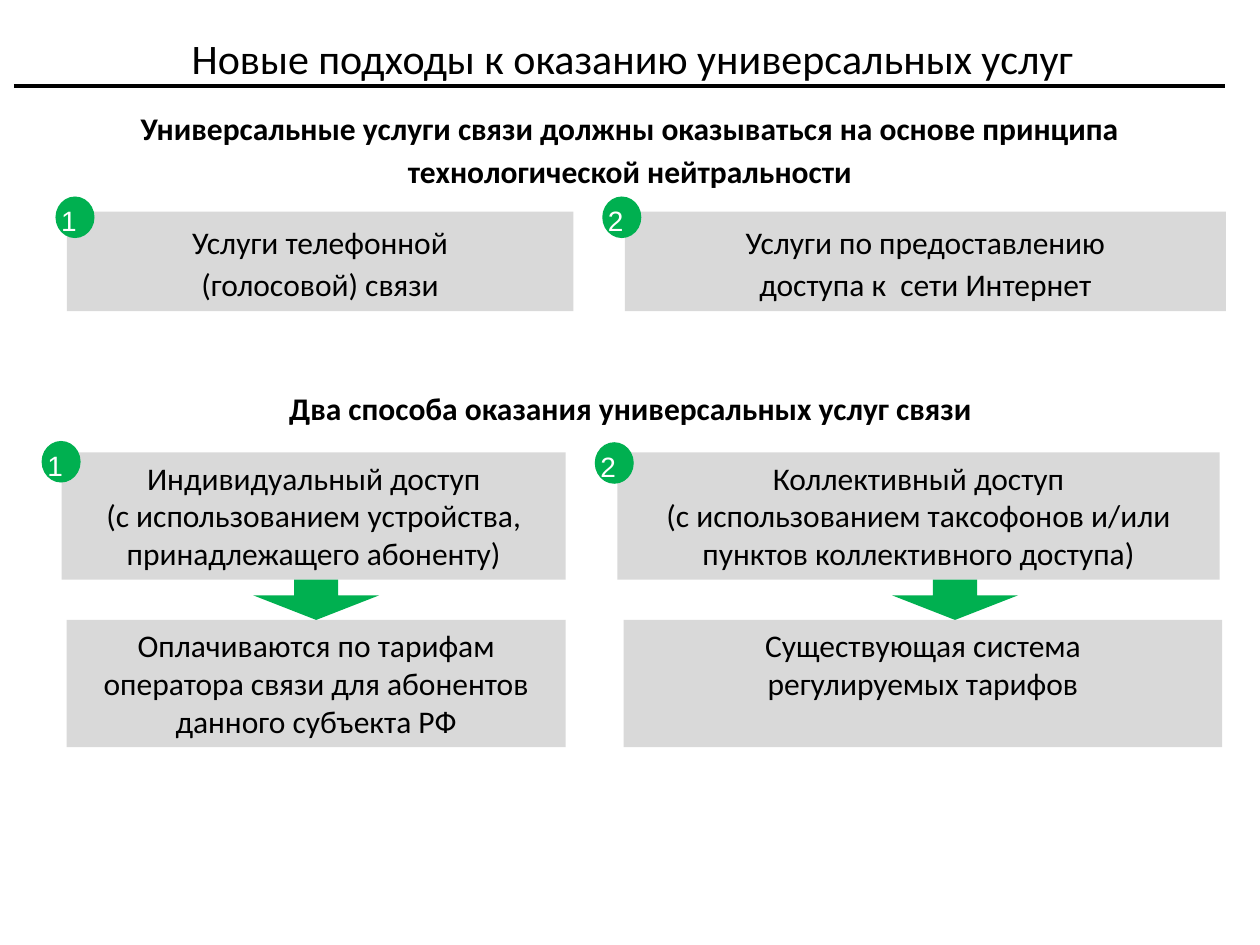
from lxml import etree
from pptx import Presentation
from pptx.dml.color import RGBColor
from pptx.enum.shapes import MSO_CONNECTOR, MSO_SHAPE
from pptx.enum.text import MSO_ANCHOR, PP_ALIGN
from pptx.oxml.ns import qn
from pptx.util import Inches, Pt

COLORS = {"text": "000000", "panel": "D9D9D9", "accent": "00B050", "badge": "FFFFFF"}

TITLE = "Новые подходы к оказанию универсальных услуг"

# text, (left, top, width, height), line spacing
HEADINGS = [
    ("Универсальные услуги связи должны оказываться на основе принципа "
     "технологической нейтральности", (0.4, 0.78, 9.2, 0.79), 1.13),
    ("Два способа оказания универсальных услуг связи", (0.44, 3.04, 9.13, 0.4), 1.0),
]

# top, height, line spacing, then (left, width, text) for each column
PANEL_ROWS = [
    (1.68, 0.79, 1.13, [
        (0.53, 4.02, "Услуги телефонной\n(голосовой) связи"),
        (4.96, 4.77, "Услуги по предоставлению\nдоступа к  сети Интернет"),
    ]),
    (3.59, 1.01, 1.0, [
        (0.49, 4.0, "Индивидуальный доступ\n"
                    "(с использованием устройства, принадлежащего абоненту)"),
        (4.9, 4.78, "Коллективный доступ\n"
                    "(с использованием таксофонов и/или пунктов коллективного доступа)"),
    ]),
    (4.92, 1.01, 1.0, [
        (0.53, 3.96, "Оплачиваются по тарифам оператора связи для абонентов данного субъекта РФ"),
        (4.95, 4.75, "Существующая система\nрегулируемых тарифов"),
    ]),
]

BADGES = [("1", 0.44, 1.56), ("2", 4.78, 1.56), ("1", 0.33, 3.5), ("2", 4.72, 3.51)]
BADGE_SIZE = (0.31, 0.33)
ARROW_LEFTS = [2.01, 7.08]
ARROW_TOP, ARROW_SIZE = 4.6, (1.0, 0.32)


def color(name):
    return RGBColor.from_string(COLORS[name])


def inches(box):
    return [Inches(length) for length in box]


def write(frame, text, size=18, font="Calibri", ink="text", bold=False,
          align=PP_ALIGN.CENTER, spacing=1.0, anchor=MSO_ANCHOR.TOP):
    frame.word_wrap = True
    frame.vertical_anchor = anchor
    frame.text = text
    for paragraph in frame.paragraphs:
        paragraph.alignment = align
        paragraph.line_spacing = spacing
        for run in paragraph.runs:
            run.font.name = font
            run.font.size = Pt(size)
            run.font.bold = bold
            run.font.color.rgb = color(ink)


def add_filled(slide, kind, box, fill):
    shape = slide.shapes.add_shape(kind, *inches(box))
    shape.shadow.inherit = False
    shape.fill.solid()
    shape.fill.fore_color.rgb = color(fill)
    shape.line.fill.background()
    return shape


def add_title(slide):
    title = slide.shapes.title
    title.left, title.top, title.width, title.height = inches((0.39, 0.24, 9.26, 0.44))
    write(title.text_frame, TITLE, size=24, anchor=MSO_ANCHOR.MIDDLE)
    rule = slide.shapes.add_connector(MSO_CONNECTOR.STRAIGHT, *inches((0.11, 0.68, 9.72, 0.68)))
    rule.line.color.rgb = color("text")
    rule.line.width = Pt(2.25)
    etree.SubElement(rule._element.spPr, qn("a:effectLst"))


def add_badge(slide, number, left, top):
    badge = add_filled(slide, MSO_SHAPE.OVAL, (left, top, *BADGE_SIZE), "accent")
    frame = badge.text_frame
    frame.margin_left = frame.margin_right = frame.margin_top = frame.margin_bottom = 0
    write(frame, number, size=16, font="Arial", ink="badge",
          align=PP_ALIGN.LEFT, spacing=Pt(20))


def main():
    deck = Presentation()
    deck.slide_width, deck.slide_height = Inches(10), Inches(7.5)
    slide = deck.slides.add_slide(deck.slide_layouts[5])  # title only

    add_title(slide)
    for text, box, spacing in HEADINGS:
        heading = slide.shapes.add_textbox(*inches(box))
        write(heading.text_frame, text, bold=True, spacing=spacing)
    for top, height, spacing, panels in PANEL_ROWS:
        for left, width, text in panels:
            panel = add_filled(slide, MSO_SHAPE.RECTANGLE, (left, top, width, height), "panel")
            write(panel.text_frame, text, spacing=spacing)
    for badge in BADGES:
        add_badge(slide, *badge)
    for left in ARROW_LEFTS:
        arrow = add_filled(slide, MSO_SHAPE.DOWN_ARROW, (left, ARROW_TOP, *ARROW_SIZE), "accent")
        arrow.adjustments[0], arrow.adjustments[1] = 0.35, 0.61

    deck.save("out.pptx")


if __name__ == "__main__":
    main()
